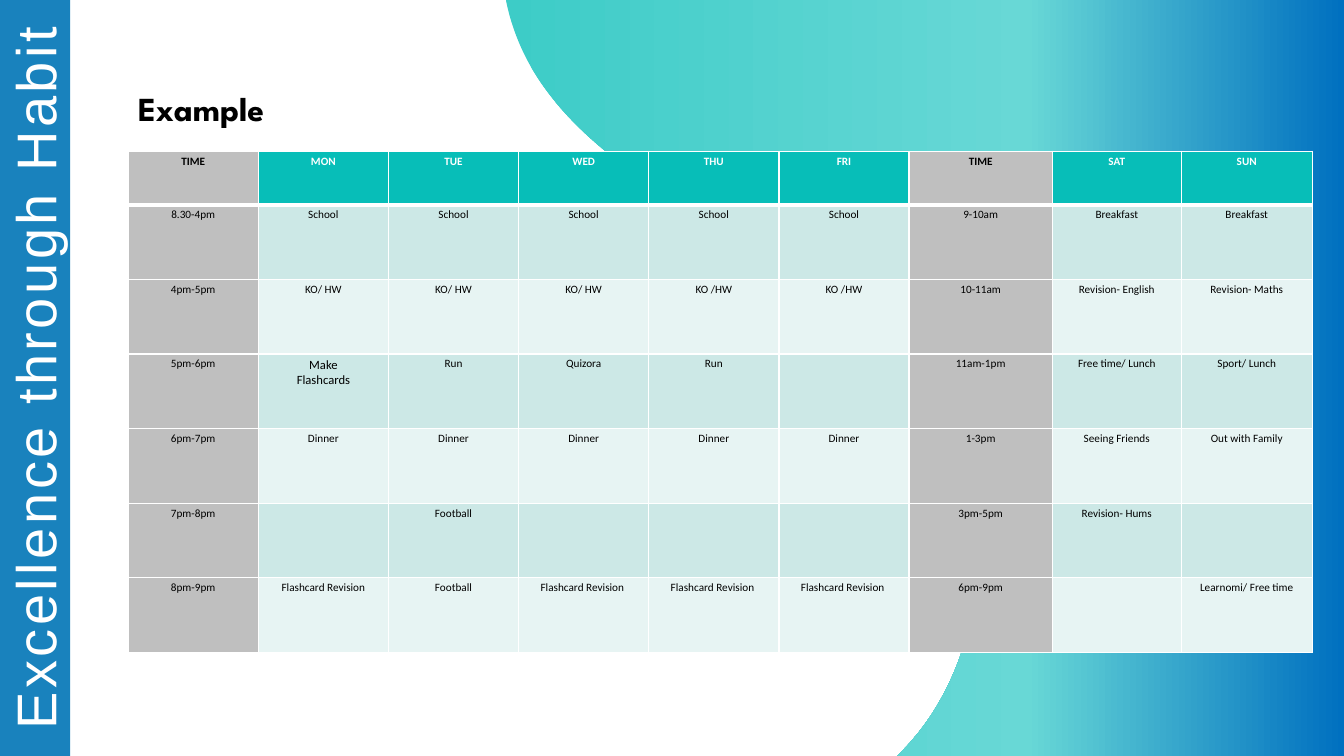
from lxml.etree import SubElement
from copy import deepcopy
from pptx import Presentation
from pptx.dml.color import RGBColor as RGB
from pptx.enum.shapes import MSO_SHAPE as SHAPE
from pptx.enum.text import PP_ALIGN as ALIGN
from pptx.oxml.ns import qn
from pptx.util import Cm, Pt

COLORS = {
    "white": "FFFFFF", "black": "000000", "band": "1982BD",
    "blue": "0070C0", "aqua": "68D8D6", "teal": "3DCCC7",
    "head": "07BEB8", "time": "BFBFBF", "dark": "CCE8E6", "light": "E7F4F3",
}


def rgb(name):
    return RGB.from_string(COLORS[name])


def style(para, face, size, color, bold=False):
    font = para.font
    font.name, font.size, font.bold = face, Pt(size), bold
    font.color.rgb = rgb(color)


prs = Presentation()
prs.slide_width, prs.slide_height = Cm(33.87), Cm(19.05)
slide = prs.slides.add_slide(prs.slide_layouts[6])
shapes = slide.shapes

# Side band with its upright motto
band = shapes.add_shape(SHAPE.RECTANGLE, 0, 0, Cm(1.77), Cm(19.05))
band.shadow.inherit = False
band.fill.solid()
band.fill.fore_color.rgb = rgb("band")
band.line.fill.background()

motto = shapes.add_textbox(Cm(-8.66), Cm(8.55), Cm(19.05), Cm(1.96))
motto.rotation = 270
motto.text_frame.word_wrap = True
para = motto.text_frame.paragraphs[0]
para.alignment = ALIGN.CENTER
run = para.add_run()
run.text = "Excellence through Habit"
style(para, "Arial", 40, "white")
run.font._element.set("spc", "250")

# Wave, in hundredths of a centimetre: two straight edges, then Bezier curves
edges = [(3387, 1910), (2256, 1910)]
curves = [
    (2261, 1905), (2266, 1900), (2271, 1895),
    (2377, 1788), (2433, 1651), (2456, 1511),
    (2487, 1331), (2459, 1140), (2352, 983),
    (2230, 808), (2022, 691), (1826, 579),
    (1628, 465), (1427, 338), (1328, 150),
    (1303, 102), (1285, 51), (1275, 0),
]
outline = shapes.build_freeform(3387, 0, scale=Cm(0.01))
outline.add_line_segments(edges + curves, close=True)
wave = outline.convert_to_shape()
# Every three points after the straight edges become one curve
lines = list(wave._element.iter(qn("a:lnTo")))[len(edges):]
for i in range(0, len(curves), 3):
    curve = lines[i].makeelement(qn("a:cubicBezTo"))
    lines[i].addprevious(curve)
    for line in lines[i:i + 3]:
        curve.append(line[0])
        line.getparent().remove(line)

wave.shadow.inherit = False
wave.line.fill.background()
wave.fill.gradient()
wave.fill.gradient_angle = 0
stops = wave._element.spPr.find(qn("a:gradFill")).find(qn("a:gsLst"))
stops.append(deepcopy(stops[0]))
shades = [(0, "teal"), (0.62, "aqua"), (1, "blue")]
for stop, (place, name) in zip(wave.fill.gradient_stops, shades):
    stop.position = place
    stop.color.rgb = rgb(name)

# Timetable
rows = [
    ["TIME", "MON", "TUE", "WED", "THU", "FRI", "TIME", "SAT", "SUN"],
    ["8.30-4pm"] + ["School"] * 5 + ["9-10am", "Breakfast", "Breakfast"],
    ["4pm-5pm"] + ["KO/ HW"] * 3 + ["KO /HW"] * 2
    + ["10-11am", "Revision- English", "Revision- Maths"],
    ["5pm-6pm", "Make\nFlashcards", "Run", "Quizora", "Run", "",
     "11am-1pm", "Free time/ Lunch", "Sport/ Lunch"],
    ["6pm-7pm"] + ["Dinner"] * 5 + ["1-3pm", "Seeing Friends", "Out with Family"],
    ["7pm-8pm", "", "Football", "", "", "", "3pm-5pm", "Revision- Hums", ""],
    ["8pm-9pm", "Flashcard Revision", "Football"] + ["Flashcard Revision "] * 3
    + ["6pm-9pm", "", "Learnomi/ Free time"],
]
widths = [3.28] * 6 + [3.61, 3.25, 3.3]
heights = [1.35] + [1.88] * 6
frame = shapes.add_table(len(rows), len(widths), Cm(3.23), Cm(3.81),
                         Cm(sum(widths)), Cm(sum(heights)))
table = frame.table
for col, width in zip(table.columns, widths):
    col.width = Cm(width)
for row, height in zip(table.rows, heights):
    row.height = Cm(height)

for r, texts in enumerate(rows):
    for c, text in enumerate(texts):
        cell = table.cell(r, c)
        cell.text = text
        cell.margin_left = cell.margin_right = Cm(0.16)
        cell.margin_top = cell.margin_bottom = Cm(0.08)
        if c in (0, 6):
            fill = "time"
        elif r == 0:
            fill = "head"
        else:
            fill = "dark" if r % 2 else "light"
        ink = "white" if fill == "head" else "black"
        size = 9 if "\n" in text else 8
        for para in cell.text_frame.paragraphs:
            para.alignment = ALIGN.CENTER
            style(para, "Calibri", size, ink, r == 0)
        # Borders come before the fill in the cell's properties
        props = cell._tc.get_or_add_tcPr()
        for side in ("lnL", "lnR", "lnT", "lnB"):
            thick = (r, side) in ((0, "lnB"), (1, "lnT"))
            line = SubElement(props, qn("a:" + side), w=str(Pt(3 if thick else 1)))
            solid = SubElement(line, qn("a:solidFill"))
            SubElement(solid, qn("a:srgbClr"), val=COLORS["white"])
        cell.fill.solid()
        cell.fill.fore_color.rgb = rgb(fill)

# Heading
title = shapes.add_textbox(Cm(3.23), Cm(2.08), Cm(4.11), Cm(1.27))
title.text_frame.word_wrap = False
para = title.text_frame.paragraphs[0]
para.text = "Example"
style(para, "League Spartan", 24, "black", True)

prs.save("out.pptx")
